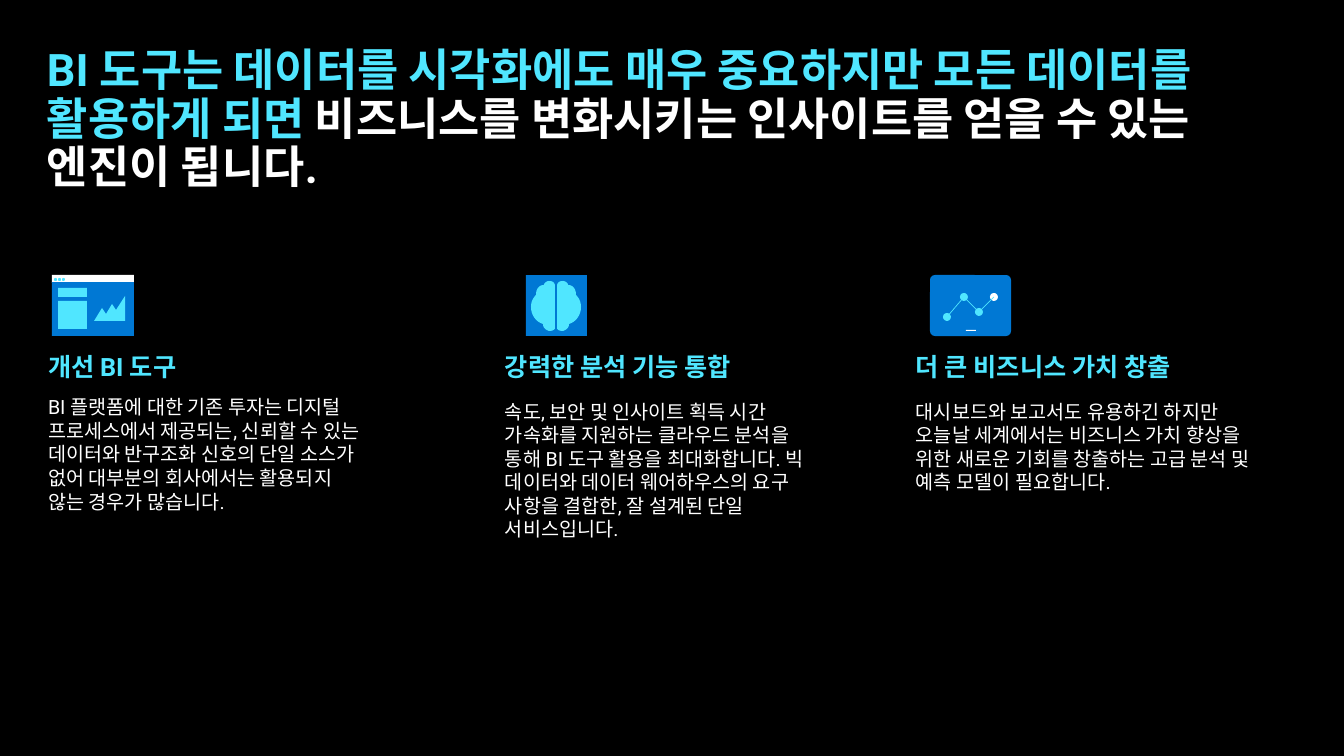
import pptx
import pptx.util
import pptx.dml.color
import pptx.enum.shapes
import pptx.enum.text

PX = 914400 / 100.8
CYAN, BLUE, WHITE = "50E6FF", "0078D4", "FFFFFF"
RECT = pptx.enum.shapes.MSO_SHAPE.RECTANGLE
ROUNDED = pptx.enum.shapes.MSO_SHAPE.ROUNDED_RECTANGLE
OVAL = pptx.enum.shapes.MSO_SHAPE.OVAL


def paint(fill, color):
    fill.solid()
    fill.fore_color.rgb = pptx.dml.color.RGBColor.from_string(color)


def style(span, size, color, bold):
    span.font.name = "Roboto"
    span.font.size = pptx.util.Pt(size)
    span.font.bold = bold
    paint(span.font.fill, color)


deck = pptx.Presentation()
deck.slide_width, deck.slide_height = round(1344 * PX), round(756 * PX)
page = deck.slides.add_slide(deck.slide_layouts[5])
paint(page.background.fill, "000000")

# Title in two colours
title = page.shapes.title
title.left, title.top, title.width, title.height = [round(v * PX) for v in (47, 48, 1235, 145)]
title.text_frame.vertical_anchor = pptx.enum.text.MSO_ANCHOR.TOP
para = title.text_frame.paragraphs[0]
para.alignment = pptx.enum.text.PP_ALIGN.LEFT
para.line_spacing = 0.9
for text, color in [
    ("BI 도구는 데이터를 시각화에도 매우 중요하지만 모든 데이터를 활용하게 되면", CYAN),
    (" 비즈니스를 변화시키는 인사이트를 얻을 수 있는 엔진이 됩니다.", WHITE),
]:
    span = para.add_run()
    span.text = text
    style(span, 32, color, True)
frames = [title.text_frame]

# Three columns: left, width, height, gap above the body, heading, body
columns = [
    (48, 320, 163, 0, "개선 BI 도구",
     "BI 플랫폼에 대한 기존 투자는 디지털 프로세스에서 제공되는, 신뢰할 수 있는 데이터와 "
     "반구조화 신호의 단일 소스가 없어 대부분의 회사에서는 활용되지 않는 경우가 많습니다."),
    (505, 320, 192, 3, "강력한 분석 기능 통합",
     "속도, 보안 및 인사이트 획득 시간 가속화를 지원하는 클라우드 분석을 통해 BI 도구 활용을 "
     "최대화합니다. 빅 데이터와 데이터 웨어하우스의 요구 사항을 결합한, 잘 설계된 단일 서비스입니다."),
    (916, 344, 144, 3, "더 큰 비즈니스 가치 창출",
     "대시보드와 보고서도 유용하긴 하지만 오늘날 세계에서는 비즈니스 가치 향상을 위한 "
     "새로운 기회를 창출하는 고급 분석 및 예측 모델이 필요합니다."),
]
for left, width, height, gap, heading, body in columns:
    box = page.shapes.add_textbox(*[round(v * PX) for v in (left, 351, width, height)])
    box.text_frame.text = f"{heading}\n{body}"
    first, second = box.text_frame.paragraphs
    style(first.runs[0], 18, CYAN, True)
    style(second.runs[0], 14, WHITE, False)
    second.space_before = pptx.util.Pt(gap)
    first.space_after = second.space_after = pptx.util.Pt(10)
    frames.append(box.text_frame)

for frame in frames:
    frame.word_wrap = True
    frame.margin_left = frame.margin_top = frame.margin_right = frame.margin_bottom = 0

# Icons: dashboard, brain, line chart
dashboard, brain, chart = [page.shapes.add_group_shape() for _ in range(3)]
dots = [(dashboard, OVAL, x, 278, 3, 3, CYAN) for x in (54, 58, 62)]
nodes = [(947, 317), (964, 297), (979, 312), (994, 297)]
markers = [(chart, OVAL, x - 4, y - 4, 8, 8, color)
           for (x, y), color in zip(nodes, (CYAN, CYAN, CYAN, WHITE))]

# Right half of the brain as cubic curves: distance from the middle axis, height
axis = 556
lobes = [
    [(1, 286), (1, 284), (2, 281), (7, 281)],
    [(7, 281), (9, 281), (12, 283), (12, 285)],
    [(12, 285), (17, 285), (20, 289), (20, 295)],
    [(20, 295), (23, 298), (25, 302), (25, 307)],
    [(25, 307), (25, 315), (20, 322), (13, 324)],
    [(13, 324), (13, 328), (10, 330), (7, 331)],
    [(7, 331), (4, 331), (1, 330), (1, 328)],
]
half = []
for a, b, c, d in lobes:
    for t in [step / 8 for step in range(9)]:
        half.append([(1 - t) ** 3 * a[i] + 3 * (1 - t) ** 2 * t * b[i]
                     + 3 * (1 - t) * t ** 2 * c[i] + t ** 3 * d[i] for i in (0, 1)])

parts = [
    (dashboard, RECT, 52, 275, 82, 8, WHITE),
    (dashboard, RECT, 52, 282, 82, 54, BLUE),
    *dots,
    (dashboard, RECT, 58, 288, 29, 9, CYAN),
    (dashboard, RECT, 58, 301, 29, 28, CYAN),
    (brain, RECT, 526, 275, 61, 61, BLUE),
    (chart, ROUNDED, 930, 275, 81, 61, BLUE),
    (chart, RECT, 935, 280, 71, 51, BLUE),
    *markers,
    (chart, ROUNDED, 966, 330, 10, 1, WHITE),
]
for icon, kind, x, y, width, height, color in parts:
    shape = icon.shapes.add_shape(kind, *[round(v * PX) for v in (x, y, width, height)])
    shape.shadow.inherit = False
    paint(shape.fill, color)
    shape.line.fill.background()
    if kind == ROUNDED:
        shape.adjustments[0] = 0.08

area = [(102, 308), (106, 314), (112, 304), (116, 310), (125, 296), (125, 321), (94, 321)]
outlines = [(dashboard, area, True), (chart, nodes, False)]
outlines += [(brain, [(axis + side * x, y) for x, y in half], True) for side in (-1, 1)]
for icon, points, filled in outlines:
    builder = icon.shapes.build_freeform(*points[0], scale=PX)
    if not filled:
        builder.add_line_segments(points[1:], close=False)
    else:
        # Curves need finer steps than one px, so the outline is drawn in hundredths
        fine = [(round(x * 100), round(y * 100)) for x, y in points]
        builder = icon.shapes.build_freeform(*fine[0], scale=PX / 100)
        builder.add_line_segments(fine[1:], close=True)
    shape = builder.convert_to_shape()
    shape.shadow.inherit = False
    if filled:
        paint(shape.fill, CYAN)
        shape.line.fill.background()
    else:
        shape.fill.background()
        paint(shape.line.fill, CYAN)
        shape.line.width = pptx.util.Pt(0.5)

deck.save("out.pptx")
